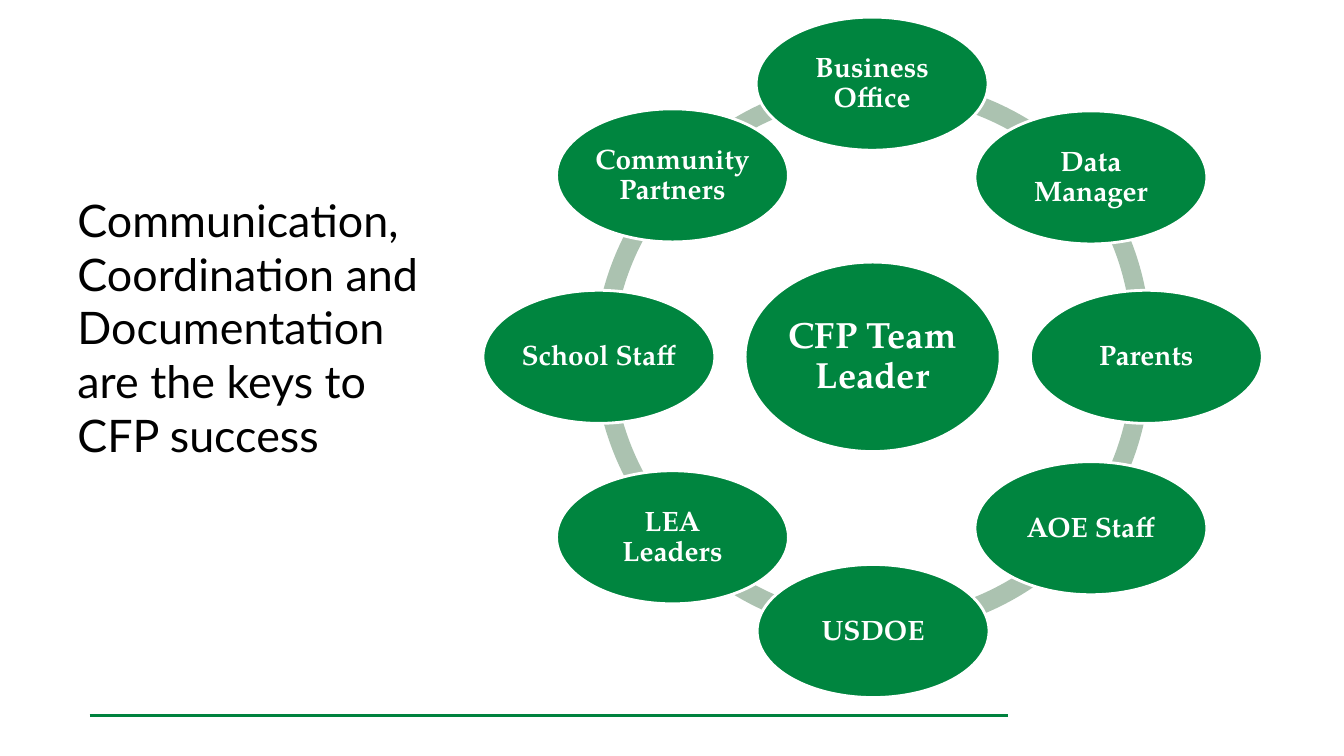
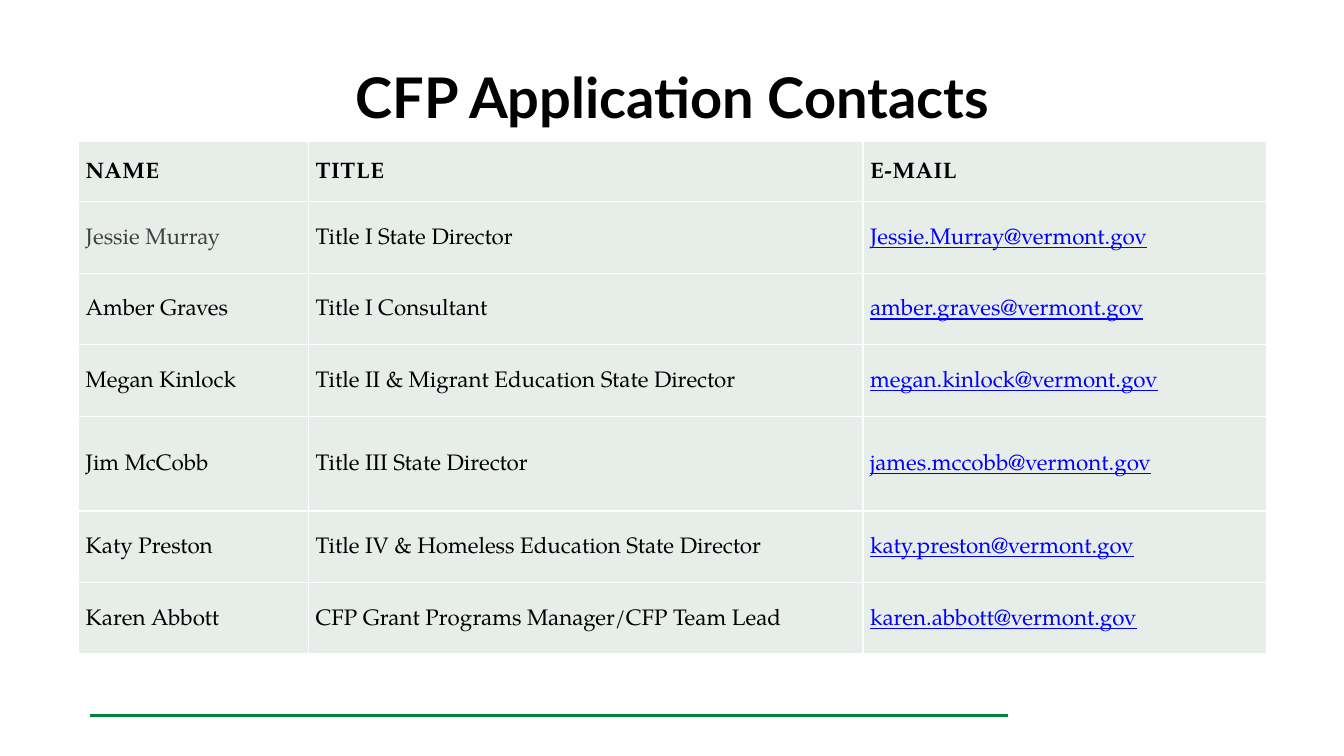
from lxml.etree import SubElement
from pptx import Presentation
from pptx.dml.color import RGBColor
from pptx.enum.shapes import MSO_CONNECTOR, MSO_SHAPE
from pptx.enum.text import MSO_ANCHOR, PP_ALIGN
from pptx.oxml.ns import qn
from pptx.util import Inches, Pt

GREEN = RGBColor(0x00, 0x85, 0x3F)
RULE_GREEN = RGBColor(0x00, 0x82, 0x3E)
SAGE = RGBColor(0xAB, 0xC2, 0xB0)
PALE = RGBColor(0xE7, 0xED, 0xE8)
WHITE = RGBColor(0xFF, 0xFF, 0xFF)
BLACK = RGBColor(0x00, 0x00, 0x00)
GRAY = RGBColor(0x40, 0x40, 0x40)
LINK_BLUE = RGBColor(0x00, 0x00, 0xFF)

TITLE_FONT = "Lato"
BODY_FONT = "TeX Gyre Pagella"
RING_SIZE = 5.52
RING_THICKNESS = 0.034
DEGREE_UNIT = 0.6
MEMBER_SIZE = (2.3, 1.32)

MEMBERS = [
    ("Business Office", (7.5, 0.17), (6, 0.78), (267.64, 319.12)),
    ("Data Manager", (9.67, 1.1), (5.89, 0.64), (322.76, 2.87)),
    ("Parents", (10.22, 2.88), (5.89, 0.84), (358.71, 37.15)),
    ("AOE Staff", (9.67, 4.58), (5.94, 0.78), (38.73, 90.86)),
    ("USDOE", (7.51, 5.6), (5.95, 0.78), (91.19, 138.99)),
    ("LEA Leaders", (5.52, 4.67), (5.89, 0.71), (137.01, 178.58)),
    ("School Staff", (4.79, 2.88), (5.89, 0.83), (181.07, 222.98)),
    ("Community Partners", (5.52, 1.08), (5.94, 0.78), (221.52, 269.03)),
]

HEADINGS = ("NAME", "TITLE", "E-MAIL")
CONTACTS = [
    ("Jessie Murray", "Title I State Director", "Jessie.Murray@vermont.gov"),
    ("Amber Graves", "Title I Consultant", "amber.graves@vermont.gov"),
    ("Megan Kinlock", "Title II & Migrant Education State Director", "megan.kinlock@vermont.gov"),
    ("Jim McCobb", "Title III State Director", "james.mccobb@vermont.gov"),
    ("Katy Preston", "Title IV & Homeless Education State Director", "katy.preston@vermont.gov"),
    ("Karen Abbott", "CFP Grant Programs Manager/CFP Team Lead", "karen.abbott@vermont.gov"),
]
COLUMN_WIDTHS = (2.28, 5.5, 4)
ROW_HEIGHTS = (0.6, 0.71, 0.71, 0.71, 0.94, 0.71, 0.71)


def set_values(target, values):
    for name, value in values.items():
        setattr(target, name, value)


def write_text(frame, text, color, font_values, paragraph_values):
    para = frame.paragraphs[0]
    set_values(para, paragraph_values)
    span = para.add_run()
    span.text = text
    set_values(span.font, font_values)
    span.font.color.rgb = color
    return span


def add_page(deck):
    page = deck.slides.add_slide(deck.slide_layouts[6])
    rule = page.shapes.add_connector(
        MSO_CONNECTOR.STRAIGHT, Inches(0.89), Inches(7.1), Inches(10), Inches(7.1))
    rule.line.color.rgb = RULE_GREEN
    rule.line.width = Pt(2.25)
    SubElement(rule._element.spPr, qn("a:effectLst"))
    return page


def add_title(page, text, width, height, size, bold=False, alignment=PP_ALIGN.LEFT):
    box = page.shapes.add_textbox(Inches(0.67), Inches(0.33), Inches(width), Inches(height))
    set_values(box.text_frame, {"word_wrap": True, "vertical_anchor": MSO_ANCHOR.MIDDLE})
    write_text(box.text_frame, text, BLACK,
               {"name": TITLE_FONT, "size": Pt(size), "bold": bold},
               {"alignment": alignment})


def add_filled_shape(page, kind, position, size, color):
    shape = page.shapes.add_shape(kind, *map(Inches, position + size))
    shape.shadow.inherit = False
    shape.fill.solid()
    shape.fill.fore_color.rgb = color
    return shape


def add_ring_arc(page, position, angles):
    arc = add_filled_shape(page, MSO_SHAPE.BLOCK_ARC, position, (RING_SIZE, RING_SIZE), SAGE)
    arc.line.fill.background()
    for index, angle in enumerate(angles):
        arc.adjustments[index] = angle * DEGREE_UNIT
    arc.adjustments[2] = RING_THICKNESS


def add_oval(page, text, position, size, font_size, inset):
    oval = add_filled_shape(page, MSO_SHAPE.OVAL, position, size, GREEN)
    oval.line.color.rgb = WHITE
    oval.line.width = Pt(2)
    frame = oval.text_frame
    set_values(frame, {"word_wrap": True, "vertical_anchor": MSO_ANCHOR.MIDDLE})
    for side in ("left", "top", "right", "bottom"):
        setattr(frame, f"margin_{side}", Inches(inset))
    write_text(frame, text, WHITE,
               {"name": BODY_FONT, "size": Pt(font_size), "bold": True},
               {"alignment": PP_ALIGN.CENTER, "line_spacing": 0.9})


def add_cell_borders(cell):
    properties = cell._tc.get_or_add_tcPr()
    for index, side in enumerate(("lnL", "lnR", "lnT", "lnB")):
        border = properties.makeelement(qn(f"a:{side}"), {"w": str(Pt(1))})
        fill = SubElement(border, qn("a:solidFill"))
        SubElement(fill, qn("a:srgbClr"), val=str(WHITE))
        properties.insert(index, border)


def fill_cell(cell, text, color, heading=False, link=False):
    cell.fill.solid()
    cell.fill.fore_color.rgb = PALE
    add_cell_borders(cell)
    set_values(cell, {
        "margin_left": Inches(0.07), "margin_right": Inches(0.07),
        "margin_top": 0, "margin_bottom": 0, "vertical_anchor": MSO_ANCHOR.MIDDLE})
    span = write_text(cell.text_frame, text, color,
                      {"name": BODY_FONT, "size": Pt(16), "bold": heading, "underline": link},
                      {"line_spacing": 1.15})
    if heading:
        span._r.get_or_add_rPr().set("spc", "50")


def add_contact_table(page):
    table = page.shapes.add_table(
        len(ROW_HEIGHTS), len(COLUMN_WIDTHS), Inches(0.78), Inches(1.4),
        Inches(sum(COLUMN_WIDTHS)), Inches(sum(ROW_HEIGHTS))).table
    set_values(table, {"first_row": False, "horz_banding": False})
    for column, width in zip(table.columns, COLUMN_WIDTHS):
        column.width = Inches(width)
    for row, height in zip(table.rows, ROW_HEIGHTS):
        row.height = Inches(height)
    for index, heading in enumerate(HEADINGS):
        fill_cell(table.cell(0, index), heading, BLACK, heading=True)
    for index, (name, title, email) in enumerate(CONTACTS, start=1):
        fill_cell(table.cell(index, 0), name, GRAY if index == 1 else BLACK)
        fill_cell(table.cell(index, 1), title, BLACK)
        fill_cell(table.cell(index, 2), email, LINK_BLUE, link=True)


def build_team_page(deck):
    page = add_page(deck)
    add_title(page, "Communication, Coordination and Documentation are the keys to CFP success",
              3.83, 5.83, 32)
    for _, _, arc_position, angles in MEMBERS:
        add_ring_arc(page, arc_position, angles)
    add_oval(page, "CFP Team Leader", (7.39, 2.6), (2.53, 1.88), 26, 0.04)
    for label, position, _, _ in MEMBERS:
        add_oval(page, label, position, MEMBER_SIZE, 20, 0.03)


def build_contacts_page(deck):
    page = add_page(deck)
    add_title(page, "CFP Application Contacts", 12, 1.25, 40, True, PP_ALIGN.CENTER)
    add_contact_table(page)


def main():
    deck = Presentation()
    set_values(deck, {"slide_width": Inches(13.33), "slide_height": Inches(7.5)})
    build_team_page(deck)
    build_contacts_page(deck)
    deck.save("out.pptx")


if __name__ == "__main__":
    main()
